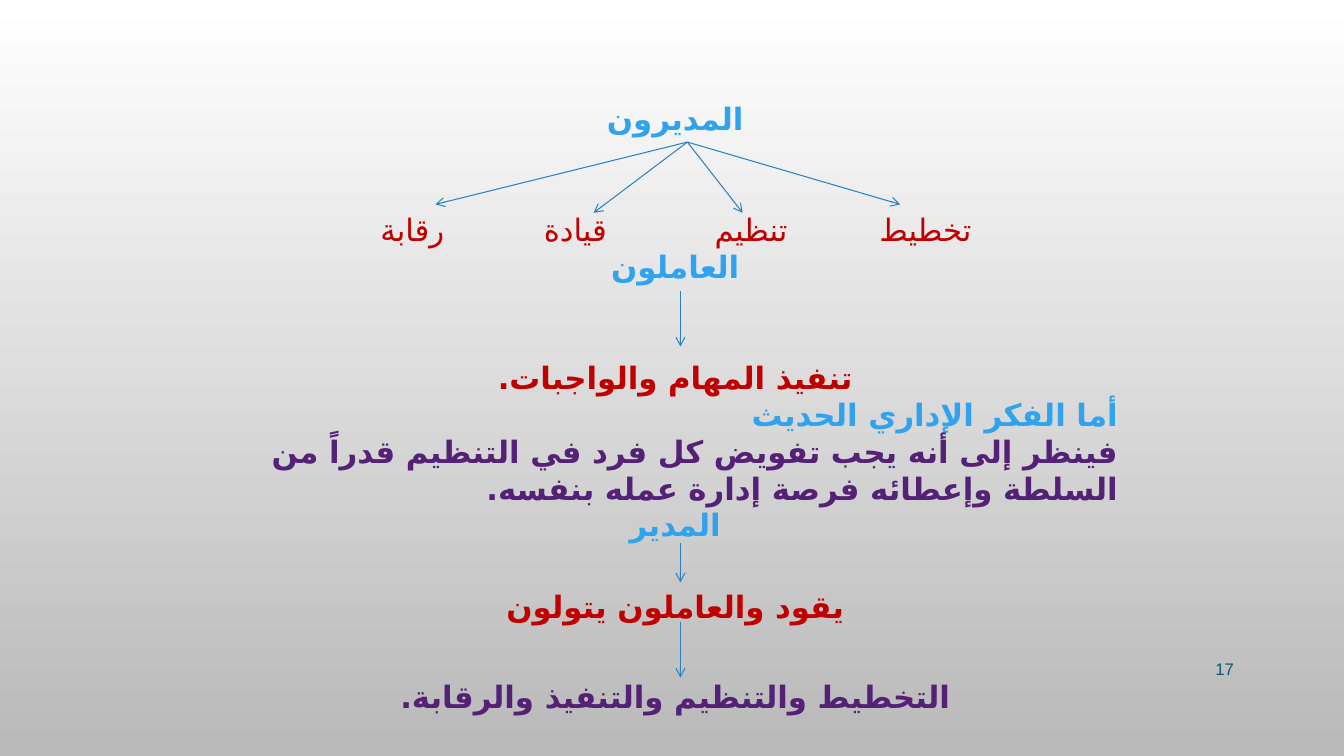
from pptx import Presentation
from pptx.dml.color import RGBColor
from pptx.enum.shapes import MSO_CONNECTOR
from pptx.enum.text import MSO_ANCHOR, PP_ALIGN
from pptx.oxml.ns import qn
from pptx.util import Pt
from lxml.etree import SubElement

COLORS = {
    "white": "FFFFFF",
    "gray": "B9B9B9",
    "blue": "2FA3EE",
    "red": "C00000",
    "purple": "542176",
    "arrow": "2683BF",
    "number": "045C75",
}
LINE_HEIGHT = 26.4

# Text, colour, alignment, space before in points
STATEMENTS = [
    ("المديرون", "blue", PP_ALIGN.CENTER, 0),
    ("العاملون", "blue", PP_ALIGN.CENTER, 3 * LINE_HEIGHT),
    ("تنفيذ المهام والواجبات.", "red", PP_ALIGN.CENTER, 2 * LINE_HEIGHT),
    ("أما الفكر الإداري الحديث", "blue", PP_ALIGN.RIGHT, 0),
    ("فينظر إلى أنه يجب تفويض كل فرد في التنظيم قدراً من السلطة "
     "وإعطائه فرصة إدارة عمله بنفسه.", "purple", PP_ALIGN.RIGHT, 0),
    ("المدير", "blue", PP_ALIGN.CENTER, 0),
    ("يقود والعاملون يتولون", "red", PP_ALIGN.CENTER, 31.5),
    ("التخطيط والتنظيم والتنفيذ والرقابة.", "purple", PP_ALIGN.CENTER, 38),
]

# Word, centre of the word, tip of its arrow
FUNCTIONS = [
    ("تخطيط", 661, (643, 146)),
    ("تنظيم", 536.5, (530.5, 152)),
    ("قيادة", 411, (424, 152)),
    ("رقابة", 294.5, (311, 146)),
]
MANAGERS_POINT = (491, 101.5)
DOWN_ARROWS = [(208, 247.5), (388, 416), (444, 484)]
DOWN_ARROW_X = 486


def rgb(name):
    return RGBColor.from_string(COLORS[name])


def paint_background(page):
    fill = page.background.fill
    fill.gradient()
    fill.gradient_angle = 270
    for stop, name in zip(fill.gradient_stops, ("white", "gray")):
        stop.color.rgb = rgb(name)


def add_box(page, left, top, width, height, anchor=MSO_ANCHOR.TOP):
    box = page.shapes.add_textbox(Pt(left), Pt(top), Pt(width), Pt(height))
    box.text_frame.word_wrap = True
    box.text_frame.vertical_anchor = anchor
    return box.text_frame


def write(para, text, color, align, size=22, font="Cabin",
          script_font="DejaVu Sans", bold=True):
    para.alignment = align
    para.line_spacing = Pt(LINE_HEIGHT * size / 22)
    para._p.get_or_add_pPr().set("rtl", "1")
    span = para.add_run()
    span.text = text
    span.font.size = Pt(size)
    span.font.name = font
    span.font.bold = bold
    span.font.color.rgb = rgb(color)
    # Right-to-left text takes the complex-script font
    SubElement(span.font._element, qn("a:cs"), typeface=script_font)


def add_arrow(page, start, end):
    arrow = page.shapes.add_connector(
        MSO_CONNECTOR.STRAIGHT, *(Pt(value) for value in (*start, *end)))
    arrow.line.color.rgb = rgb("arrow")
    arrow.line.width = Pt(0.75)
    SubElement(arrow.line._get_or_add_ln(), qn("a:tailEnd"), type="arrow")
    SubElement(arrow._element.spPr, qn("a:effectLst"))


def add_statements(page):
    frame = add_box(page, 159, 67.7, 646.5, 472.3)
    for index, (text, color, align, gap) in enumerate(STATEMENTS):
        para = frame.paragraphs[0] if index == 0 else frame.add_paragraph()
        if gap:
            para.space_before = Pt(gap)
        write(para, text, color, align)


def add_functions(page):
    for word, center, tip in FUNCTIONS:
        frame = add_box(page, center - 50, 147, 100, 34)
        write(frame.paragraphs[0], word, "red", PP_ALIGN.CENTER, bold=False)
        add_arrow(page, MANAGERS_POINT, tip)


def main():
    deck = Presentation()
    deck.slide_width, deck.slide_height = Pt(960), Pt(540)
    page = deck.slides.add_slide(deck.slide_layouts[6])
    paint_background(page)

    # Managers, workers and the modern view
    add_statements(page)
    add_functions(page)
    for top, bottom in DOWN_ARROWS:
        add_arrow(page, (DOWN_ARROW_X, top), (DOWN_ARROW_X, bottom))

    # Page number
    frame = add_box(page, 828, 463, 60.5, 29, MSO_ANCHOR.MIDDLE)
    write(frame.paragraphs[0], "17", "number", PP_ALIGN.RIGHT, size=12,
          font="Cambria", script_font="Arial", bold=False)

    deck.save("out.pptx")


if __name__ == "__main__":
    main()
